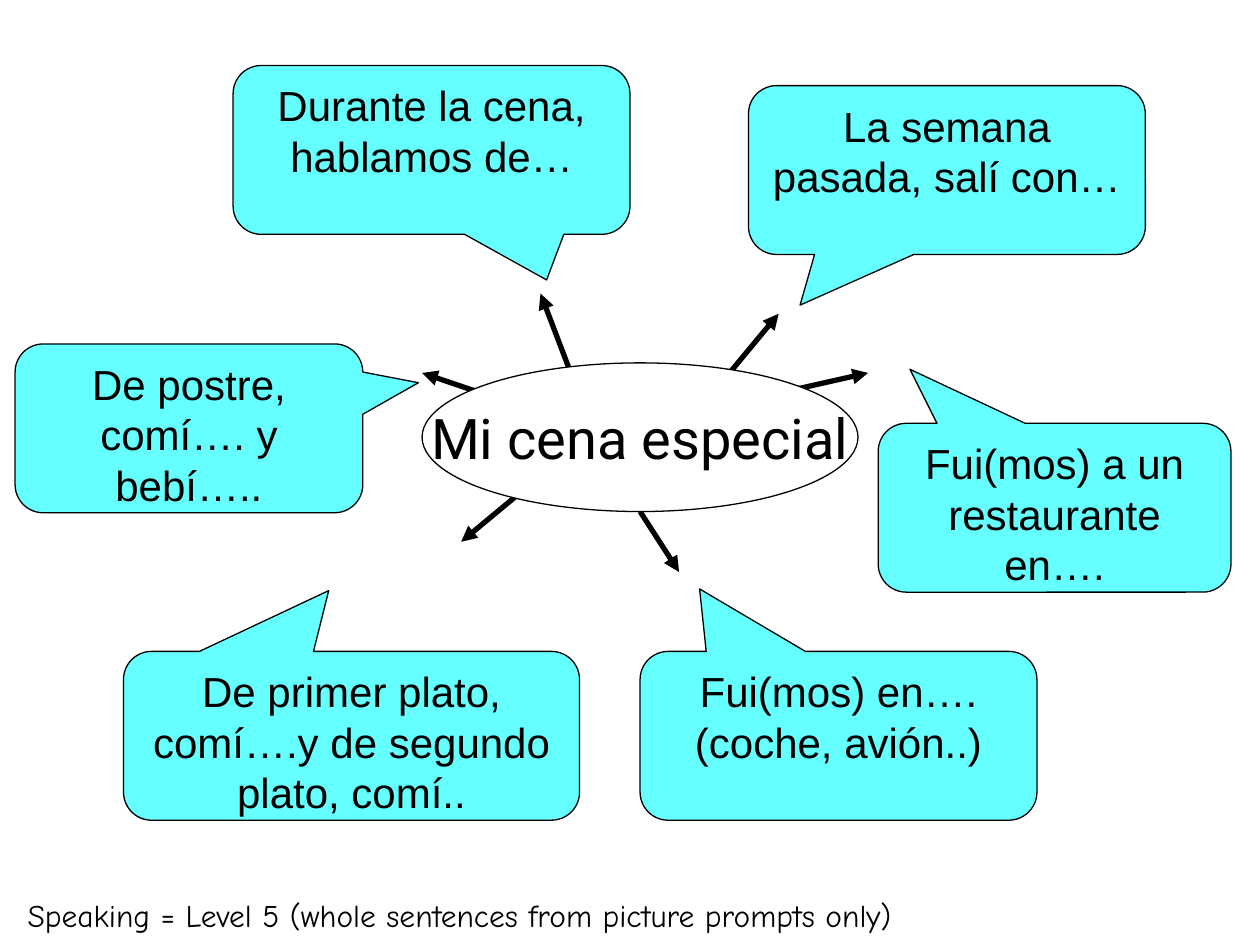
"""Builds a speaking-prompt slide: a central topic with callouts around it."""
import pptx
import pptx.dml.color
import pptx.enum.shapes
import pptx.enum.text
import pptx.oxml
import pptx.oxml.ns
import pptx.util

Inches = pptx.util.Inches
Pt = pptx.util.Pt
MSO_SHAPE = pptx.enum.shapes.MSO_SHAPE
PP_ALIGN = pptx.enum.text.PP_ALIGN
MSO_ANCHOR = pptx.enum.text.MSO_ANCHOR

COLORS = {"ink": "000000", "topic": "FFFFFF", "callout": "66FFFF"}

ARROWS = [
    (4.13, 3.91, 3.66, 4.3),
    (5.79, 2.96, 6.18, 2.49),
    (4.53, 2.96, 4.29, 2.33),
    (3.82, 3.12, 3.35, 2.96),
    (6.18, 3.12, 6.89, 2.96),
    (5.08, 4.06, 5.39, 4.54),
]

CALLOUT_HEIGHT = 1.34
CALLOUTS = [
    ("La semana pasada, salí con…", 5.94, 0.68, 3.15, (-0.37, 0.8)),
    ("Fui(mos) a un restaurante en….", 6.97, 3.36, 2.8, (-0.41, -0.82)),
    ("Fui(mos) en….\n(coche, avión..)", 5.08, 5.17, 3.15, (-0.35, -0.87)),
    ("De primer plato, comí….y de segundo plato, comí..", 0.98, 5.17, 3.62, (-0.05, -0.86)),
    ("De postre, comí…. y bebí…..", 0.12, 2.73, 2.76, (0.66, -0.27)),
    ("Durante la cena, hablamos de…", 1.85, 0.52, 3.15, (0.29, 0.77)),
]


def rgb(name):
    return pptx.dml.color.RGBColor.from_string(COLORS[name])


def write_text(sp, text, size=24, font="Arial", align=PP_ALIGN.CENTER,
               anchor=MSO_ANCHOR.TOP, wrap=True):
    tf = sp.text_frame
    tf.word_wrap = wrap
    tf.vertical_anchor = anchor
    p = tf.paragraphs[0]
    p.text = text
    p.alignment = align
    for r in p.runs:
        r.font.size = Pt(size)
        r.font.name = font
        r.font.color.rgb = rgb("ink")


def add_outlined(s, kind, left, top, width, height, fill):
    sp = s.shapes.add_shape(kind, Inches(left), Inches(top), Inches(width), Inches(height))
    sp.shadow.inherit = False
    sp.fill.solid()
    sp.fill.fore_color.rgb = rgb(fill)
    sp.line.color.rgb = rgb("ink")
    sp.line.width = Pt(0.75)
    return sp


def add_arrow(s, x1, y1, x2, y2):
    cxn = s.shapes.add_connector(pptx.enum.shapes.MSO_CONNECTOR.STRAIGHT,
                                 Inches(x1), Inches(y1), Inches(x2), Inches(y2))
    cxn.line.color.rgb = rgb("ink")
    cxn.line.width = Pt(3)
    ns = pptx.oxml.ns.nsdecls("a")
    cxn.line._get_or_add_ln().append(
        pptx.oxml.parse_xml(f'<a:tailEnd {ns} type="triangle"/>'))
    cxn._element.spPr.append(pptx.oxml.parse_xml(f"<a:effectLst {ns}/>"))


def add_topic(s, text):
    sp = add_outlined(s, MSO_SHAPE.OVAL, 3.35, 2.88, 3.46, 1.18, "topic")
    write_text(sp, text, size=32, font="Roboto", anchor=MSO_ANCHOR.MIDDLE, wrap=False)


def add_callout(s, text, left, top, width, tip):
    sp = add_outlined(s, MSO_SHAPE.ROUNDED_RECTANGULAR_CALLOUT,
                      left, top, width, CALLOUT_HEIGHT, "callout")
    sp.adjustments[0], sp.adjustments[1] = tip
    write_text(sp, text)


def add_footer(s, text):
    sp = s.shapes.add_textbox(Inches(0.12), Inches(7.06), Inches(7.72), Inches(0.4))
    write_text(sp, text, size=18, font="Comic Neue", align=PP_ALIGN.LEFT)


def main():
    prs = pptx.Presentation()
    prs.slide_width = Inches(10)
    prs.slide_height = Inches(7.5)
    s = prs.slides.add_slide(prs.slide_layouts[6])
    for arrow in ARROWS:
        add_arrow(s, *arrow)
    add_topic(s, "Mi cena especial")
    for callout in CALLOUTS:
        add_callout(s, *callout)
    add_footer(s, "Speaking = Level 5 (whole sentences from picture prompts only)")
    prs.save("out.pptx")


if __name__ == "__main__":
    main()
